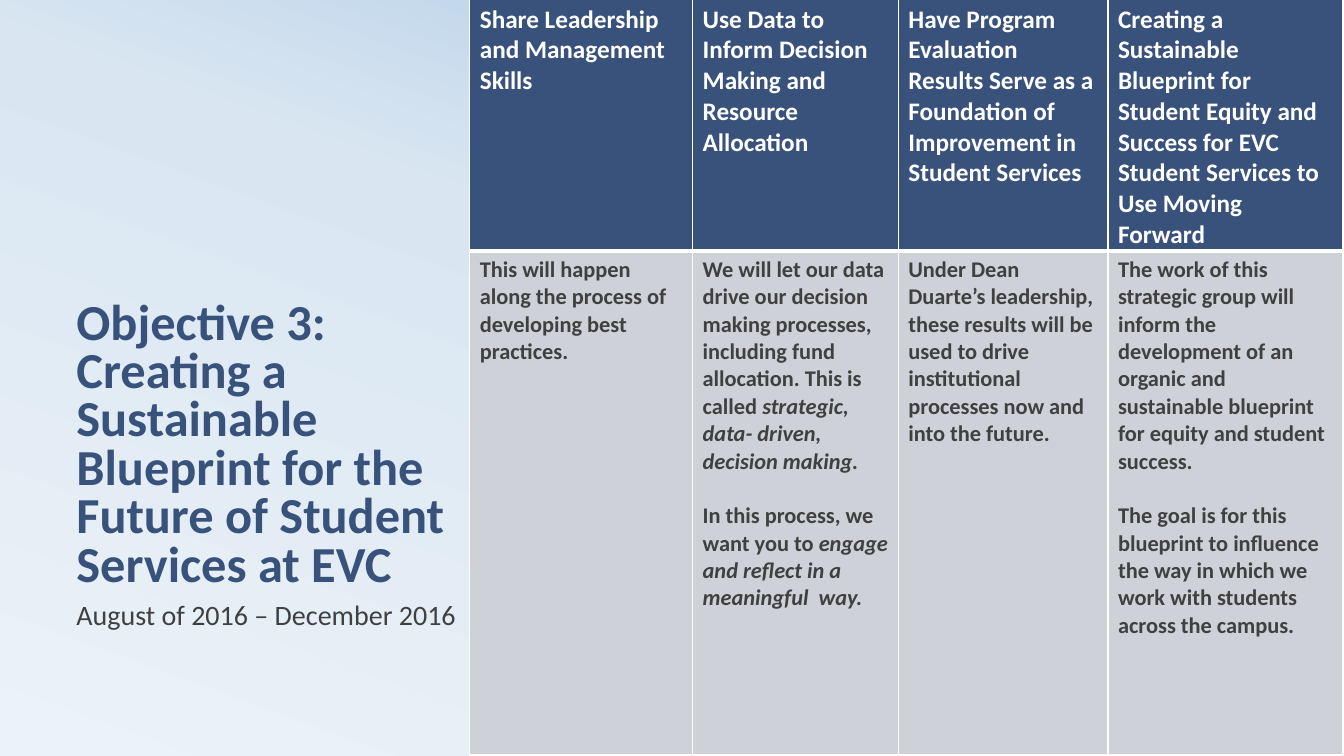
from copy import deepcopy

from lxml import etree
from pptx import Presentation
from pptx.dml.color import RGBColor
from pptx.enum.text import MSO_ANCHOR
from pptx.oxml.ns import qn
from pptx.util import Inches, Pt

TOP, BOTTOM = MSO_ANCHOR.TOP, MSO_ANCHOR.BOTTOM
FONT = "Calibri"
COLORS = {
    "navy": "39527B", "text": "404040", "cell": "CED1D7", "white": "FFFFFF",
    "pale": "ECF3F8", "mist": "D9E6F2", "sky": "A1C1DE",
}

# Content: cells hold paragraphs, paragraphs hold (text, italic) runs
TITLE = ("Objective 3:\nCreating a Sustainable Blueprint for the "
         "Future of Student Services at EVC")
DATES = "August of 2016 – December 2016"
HEADERS = [
    "Share Leadership and Management Skills",
    "Use Data to Inform Decision Making and Resource Allocation",
    "Have Program Evaluation Results Serve as a Foundation of Improvement "
    "in Student Services",
    "Creating a Sustainable Blueprint for Student Equity and Success for EVC "
    "Student Services to Use Moving Forward",
]
DETAILS = [
    [[("This will happen along the process of developing best practices.", False)]],
    [[("We will let our data drive our decision making processes, including "
       "fund allocation. This is called ", False),
      ("strategic, data- driven, decision making.", True)],
     [("In this process, we want you to ", False),
      ("engage and reflect in a meaningful  way.", True)]],
    [[("Under Dean Duarte’s leadership, these results will be used to drive "
       "institutional processes now and into the future.", False)]],
    [[("The work of this strategic group will inform the development of an "
       "organic and sustainable blueprint for equity and student success.", False)],
     [("The goal is for this blueprint to influence the way in which we work "
       "with students across the campus.", False)]],
]
COLUMN_WIDTHS = [2.21, 2.04, 2.08, 2.33]
ROW_HEIGHTS = [2.49, 5]
GRADIENT = [(0, "pale"), (0.58, "mist"), (1, "sky")]


def rgb(name):
    return RGBColor.from_string(COLORS[name])


def style(paragraph, size, color, bold):
    font = paragraph.font
    font.name, font.size, font.bold = FONT, Pt(size), bold
    font.color.rgb = rgb(color)


def add_text(slide, text, top, height, anchor, size, color, bold, spacing):
    frame = slide.shapes.add_textbox(
        Inches(0.66), Inches(top), Inches(4.33), Inches(height)).text_frame
    frame.word_wrap = True
    frame.vertical_anchor = anchor
    paragraph = frame.paragraphs[0]
    paragraph.text = text
    paragraph.line_spacing = spacing
    style(paragraph, size, color, bold)


def set_borders(cell, widths):
    properties = cell._tc.get_or_add_tcPr()
    for side, width in widths.items():
        line = etree.SubElement(properties, qn(f"a:ln{side}"), w=str(Pt(width)))
        fill = etree.SubElement(line, qn("a:solidFill"))
        etree.SubElement(fill, qn("a:srgbClr"), val=COLORS["white"])


def fill_cell(cell, paragraphs, size, color, background, borders):
    set_borders(cell, borders)
    cell.fill.solid()
    cell.fill.fore_color.rgb = rgb(background)
    frame = cell.text_frame
    for index, runs in enumerate(paragraphs):
        paragraph = frame.add_paragraph() if index else frame.paragraphs[0]
        if index:
            paragraph.space_before = Pt(19.5)
        style(paragraph, size, color, True)
        for text, italic in runs:
            run = paragraph.add_run()
            run.text = text
            run.font.italic = italic


def set_background(slide):
    fill = slide.background.fill
    fill.gradient()
    fill.gradient_angle = 70
    first = fill._fill._gradFill.find(qn("a:gsLst"))[0]
    first.addnext(deepcopy(first))
    for stop, (position, color) in zip(fill.gradient_stops, GRADIENT):
        stop.position = position
        stop.color.rgb = rgb(color)


def main():
    presentation = Presentation()
    presentation.slide_width, presentation.slide_height = Inches(13.33), Inches(7.5)
    slide = presentation.slides.add_slide(presentation.slide_layouts[6])
    set_background(slide)

    # Title and dates
    add_text(slide, TITLE, 0.75, 5.17, BOTTOM, 36, "navy", True, 0.8)
    add_text(slide, DATES, 5.92, 0.83, TOP, 20, "text", False, 0.9)

    # Objectives table
    table = slide.shapes.add_table(
        2, len(HEADERS), Inches(4.66), Inches(-0.01),
        Inches(sum(COLUMN_WIDTHS)), Inches(sum(ROW_HEIGHTS))).table
    for column, width in zip(table.columns, COLUMN_WIDTHS):
        column.width = Inches(width)
    for row, height in zip(table.rows, ROW_HEIGHTS):
        row.height = Inches(height)
    for index, (header, detail) in enumerate(zip(HEADERS, DETAILS)):
        fill_cell(table.cell(0, index), [[(header, False)]], 18, "white", "navy",
                  {"L": 1, "R": 1, "T": 1, "B": 3})
        fill_cell(table.cell(1, index), detail, 16, "text", "cell",
                  {"L": 1, "R": 1, "T": 3, "B": 1})

    presentation.save("out.pptx")


if __name__ == "__main__":
    main()
